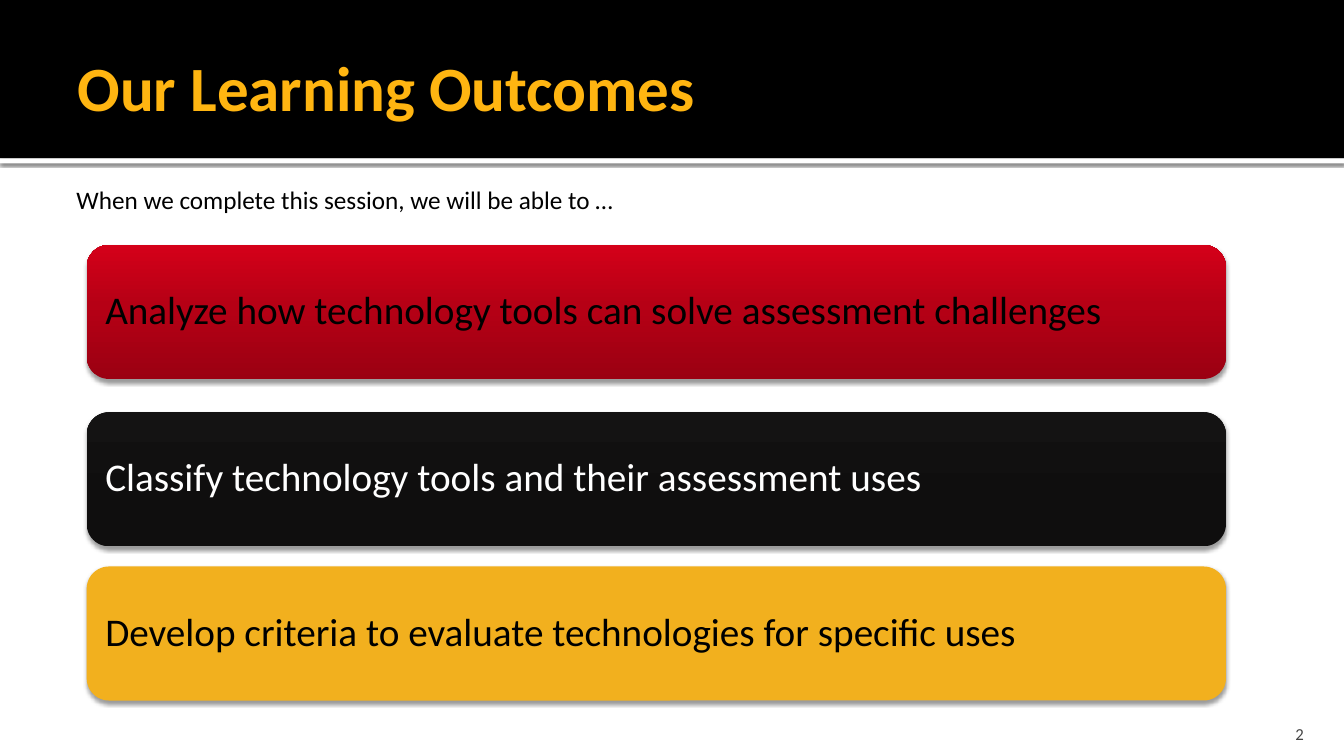
"""Builds the slide that lists the learning outcomes of the session."""
from lxml import etree
from pptx import Presentation
from pptx.dml.color import RGBColor
from pptx.enum.shapes import MSO_SHAPE
from pptx.enum.text import MSO_ANCHOR, PP_ALIGN
from pptx.oxml import parse_xml
from pptx.oxml.ns import nsdecls, qn
from pptx.util import Inches, Pt

RECTANGLE = MSO_SHAPE.RECTANGLE
ROUNDED = MSO_SHAPE.ROUNDED_RECTANGLE
TOP, MIDDLE, BOTTOM = MSO_ANCHOR.TOP, MSO_ANCHOR.MIDDLE, MSO_ANCHOR.BOTTOM
LEFT, RIGHT = PP_ALIGN.LEFT, PP_ALIGN.RIGHT

OUTCOMES = [
    (2.43, ["9B0012", "B60015", "D40019"], "000000",
     "Analyze how technology tools can solve assessment challenges"),
    (4.09, ["0F0E0E", "111010", "141313"], "FFFFFF",
     "Classify technology tools and their assessment uses"),
    (5.62, ["F2B01E"], "000000",
     "Develop criteria to evaluate technologies for specific uses"),
]


def color(value):
    return RGBColor.from_string(value)


def write(frame, text, size=18, fill="000000", font="Calibri", bold=False,
          align=LEFT, anchor=TOP, insets=(0.1, 0.05, 0.1, 0.05), spacing=1.0):
    frame.word_wrap = True
    frame.vertical_anchor = anchor
    (frame.margin_left, frame.margin_top,
     frame.margin_right, frame.margin_bottom) = map(Inches, insets)
    paragraph = frame.paragraphs[0]
    paragraph.alignment = align
    paragraph.line_spacing = spacing
    run = paragraph.add_run()
    run.text = text
    run.font.name = font
    run.font.size = Pt(size)
    run.font.bold = bold
    run.font.color.rgb = color(fill)


class SlideBuilder:
    def __init__(self, slide):
        self.slide = slide
        self.card_shadow = (38, 3.1, 2)

    def text(self, box, text, **style):
        shape = self.slide.shapes.add_textbox(*map(Inches, box))
        write(shape.text_frame, text, **style)

    def shape(self, kind, box, fills, shadow=None):
        shape = self.slide.shapes.add_shape(kind, *map(Inches, box))
        shape.line.fill.background()
        shape.shadow.inherit = False
        if len(fills) == 1:
            shape.fill.solid()
            shape.fill.fore_color.rgb = color(fills[0])
        else:
            self.gradient(shape, fills)
        if shadow:
            self.shadow(shape, *shadow)
        return shape

    def gradient(self, shape, fills):
        stops = "".join(
            f'<a:gs pos="{position * 1000}"><a:srgbClr val="{value}"/></a:gs>'
            for position, value in zip((0, 55, 100), fills))
        shape._element.spPr.find(qn("a:prstGeom")).addnext(parse_xml(
            f'<a:gradFill {nsdecls("a")}><a:gsLst>{stops}</a:gsLst>'
            '<a:lin ang="16200000" scaled="0"/></a:gradFill>'))

    def shadow(self, shape, opacity, blur, distance):
        effects = shape._element.spPr.find(qn("a:effectLst"))
        outer = etree.SubElement(
            effects, qn("a:outerShdw"), blurRad=str(Pt(blur)),
            dist=str(Pt(distance)), dir="5400000", rotWithShape="0")
        shade = etree.SubElement(outer, qn("a:srgbClr"), val="000000")
        etree.SubElement(shade, qn("a:alpha"), val=str(opacity * 1000))

    def card(self, top, fills, text_color, text):
        shape = self.shape(ROUNDED, (0.86, top, 11.3, 1.33), fills,
                           self.card_shadow)
        write(shape.text_frame, text, size=28, fill=text_color,
              anchor=MIDDLE, insets=(0.12,) * 4, spacing=0.9)


def main():
    presentation = Presentation()
    presentation.slide_width = Inches(13.33)
    presentation.slide_height = Inches(7.5)
    builder = SlideBuilder(
        presentation.slides.add_slide(presentation.slide_layouts[6]))

    builder.shape(RECTANGLE, (0, 1.57, 13.33, 0.05), ["FFFFFF"], (60, 2.5, 0.8))
    builder.shape(RECTANGLE, (0, 0, 13.33, 1.57), ["000000"])
    builder.text((0.67, 0.17, 12, 1.37), "Our Learning Outcomes", size=45,
                 fill="FFB511", bold=True, anchor=MIDDLE,
                 insets=(0.1, 0.05, 0.05, 0.05))
    builder.text((11.96, 7.08, 1.07, 0.3), "2", size=12, fill="454545",
                 align=RIGHT, anchor=BOTTOM, insets=(0.1, 0.05, 0.1, 0))
    builder.text((0.66, 1.78, 11.22, 0.4),
                 "When we complete this session, we will be able to …")
    for outcome in OUTCOMES:
        builder.card(*outcome)

    presentation.save("out.pptx")


if __name__ == "__main__":
    main()
